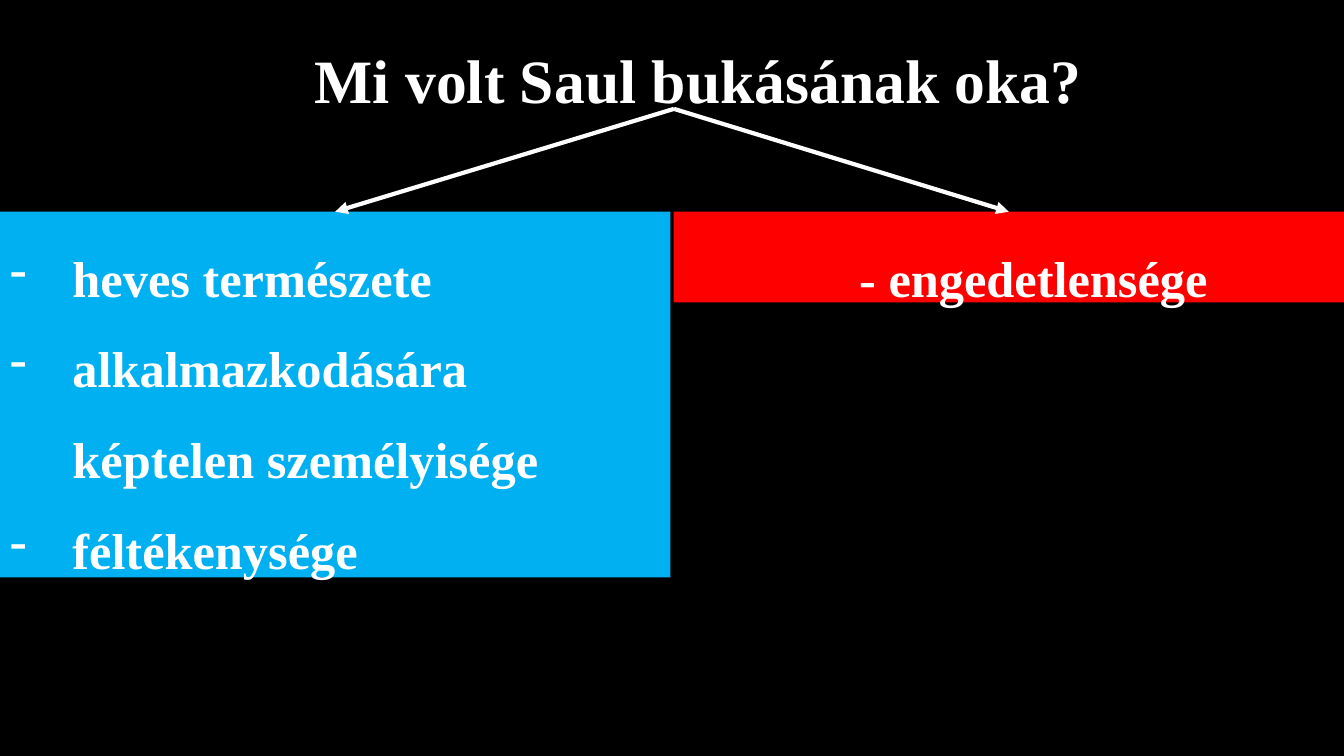
from dataclasses import dataclass

from lxml.etree import SubElement
from pptx import Presentation
from pptx.dml.color import RGBColor
from pptx.enum.shapes import MSO_CONNECTOR as Connector, MSO_SHAPE as Preset
from pptx.enum.text import MSO_ANCHOR as Anchor, MSO_AUTO_SIZE as AutoSize, PP_ALIGN as Align
from pptx.oxml.ns import qn
from pptx.shapes.autoshape import Shape
from pptx.slide import Slide
from pptx.util import Inches, Pt

WHITE = "FFFFFF"
PANEL_TOP, PANEL_WIDTH = 2.1, 6.65


@dataclass
class Panel:
    left: float
    height: float
    fill: str
    lines: list[str]
    bulleted: bool = False


PANELS = [
    Panel(0, 3.63, "00B0F0",
          ["heves természete", "alkalmazkodására képtelen személyisége", "féltékenysége"],
          bulleted=True),
    Panel(6.68, 0.9, "FF0000", ["- engedetlensége"]),
]


def color(value: str) -> RGBColor:
    return RGBColor.from_string(value)


def write(box: Shape, lines: list[str], size: int, bulleted: bool = False) -> None:
    frame = box.text_frame
    frame_format = {"word_wrap": True, "auto_size": AutoSize.SHAPE_TO_FIT_TEXT,
                    "vertical_anchor": Anchor.TOP}
    for name, value in frame_format.items():
        setattr(frame, name, value)
    margin, indent = (0.62, -0.62) if bulleted else (0, 0.49)
    for index, line in enumerate(lines):
        para = frame.add_paragraph() if index else frame.paragraphs[0]
        para.alignment = Align.LEFT if bulleted else Align.CENTER
        para.line_spacing = 1.5
        properties = para._p.get_or_add_pPr()
        properties.set("marL", str(Inches(margin)))
        properties.set("indent", str(Inches(indent)))
        if bulleted:
            SubElement(properties, qn("a:buFontTx"))
            SubElement(properties, qn("a:buChar"), char="-")
        span = para.add_run()
        span.text = line
        span_format = {"name": "Times New Roman", "size": Pt(size), "bold": True}
        for name, value in span_format.items():
            setattr(span.font, name, value)
        span.font.color.rgb = color(WHITE)


def add_title(page: Slide) -> Shape:
    box = page.shapes.add_textbox(Inches(0.02), Inches(0), Inches(13.33), Inches(1.08))
    write(box, ["Mi volt Saul bukásának oka?"], 44)
    return box


def add_panel(page: Slide, panel: Panel) -> Shape:
    box = page.shapes.add_shape(Preset.RECTANGLE, Inches(panel.left), Inches(PANEL_TOP),
                                Inches(PANEL_WIDTH), Inches(panel.height))
    box.shadow.inherit = False
    box.fill.solid()
    box.fill.fore_color.rgb = color(panel.fill)
    box.line.fill.background()
    write(box, panel.lines, 36, panel.bulleted)
    return box


def add_arrow(page: Slide, start: Shape, end: Shape) -> None:
    arrow = page.shapes.add_connector(Connector.STRAIGHT, 0, 0, 0, 0)
    arrow.begin_connect(start, 2)
    arrow.end_connect(end, 0)
    arrow.line.width = Pt(3)
    arrow.line.color.rgb = color(WHITE)
    SubElement(arrow.line._get_or_add_ln(), qn("a:tailEnd"), type="triangle")
    SubElement(arrow._element.spPr, qn("a:effectLst"))


def main() -> None:
    deck = Presentation()
    deck.slide_width, deck.slide_height = Inches(13.33), Inches(7.5)
    page = deck.slides.add_slide(deck.slide_layouts[6])
    page.background.fill.solid()
    page.background.fill.fore_color.rgb = color("000000")

    # Question and its two answers
    title = add_title(page)
    boxes = [add_panel(page, panel) for panel in PANELS]

    # Arrows from the question to each answer
    for box in boxes:
        add_arrow(page, title, box)

    deck.save("out.pptx")


if __name__ == "__main__":
    main()
